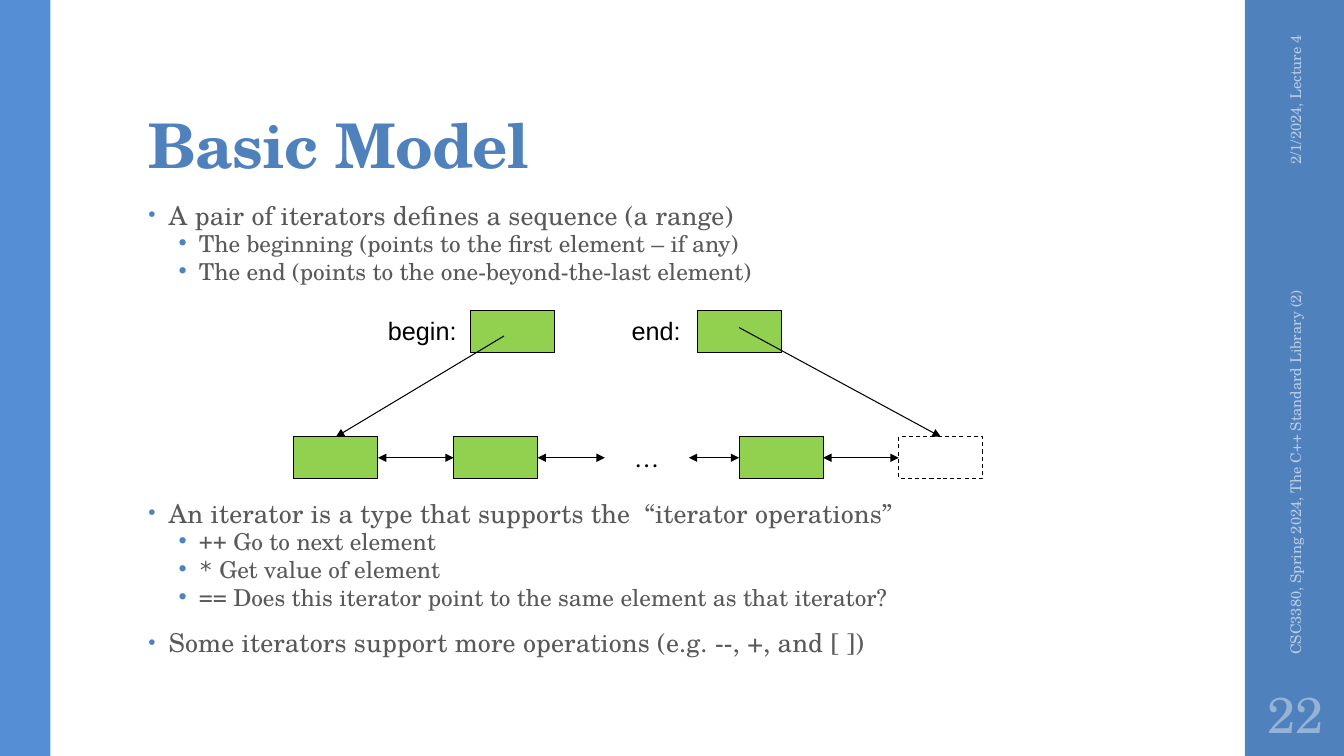
from lxml.etree import SubElement
from pptx import Presentation
from pptx.dml.color import RGBColor
from pptx.enum.dml import MSO_LINE
from pptx.enum.shapes import MSO_CONNECTOR, MSO_SHAPE
from pptx.enum.text import MSO_ANCHOR, PP_ALIGN
from pptx.oxml.ns import qn
from pptx.util import Inches, Pt

SERIF, MONO, SANS = "TeX Gyre Schola", "DejaVu Sans Mono", "Arial"
BLUE, LIGHT_BLUE, PALE, NUMBER = "4F81BD", "558ED5", "B9CDE5", "95B3D7"
GRAY, GREEN, BLACK = "595959", "92D050", "000000"
COLS, ROWS = 160, 90
NODE_W, NODE_H, NODE_ROW, POINTER_ROW = 10, 5, 52, 37

LEVELS = [
    dict(size=18.5, spacing=0.75, before=14, after=2, indent=0.2, bullet=80, track=10),
    dict(size=16.6, spacing=0.7, before=3, after=3, indent=0.5, bullet=100, track=0),
]
RANGE = [
    (0, "", "A pair of iterators defines a sequence (a range)"),
    (1, "", "The beginning (points to the first element – if any)"),
    (1, "", "The end (points to the one-beyond-the-last element)"),
]
OPERATIONS = [
    (0, "", "An iterator is a type that supports the  “iterator operations”"),
    (1, "++", " Go to next element"),
    (1, "*", " Get value of element"),
    (1, "==", " Does this iterator point to the same element as that iterator?"),
    (0, "", "Some iterators support more operations (e.g. --, +, and [ ])"),
]


def rgb(value):
    return RGBColor.from_string(value)


def add_run(p, text, size=18, font=SERIF, color=BLACK, bold=False, track=0):
    r = p.add_run()
    r.text = text
    r.font.size, r.font.name, r.font.bold = Pt(size), font, bold
    r.font.color.rgb = rgb(color)
    if track:
        r.font._element.set("spc", str(track))


class Deck:
    def __init__(self, prs):
        self.prs = prs
        self.slide = prs.slides.add_slide(prs.slide_layouts[6])

    def x(self, cols):
        return round(self.prs.slide_width * cols / COLS)

    def y(self, rows):
        return round(self.prs.slide_height * rows / ROWS)

    def area(self, col, row, cols, rows):
        return self.x(col), self.y(row), self.x(cols), self.y(rows)

    def box(self, *area, fill=None, line=None, dash=None):
        sp = self.slide.shapes.add_shape(MSO_SHAPE.RECTANGLE, *self.area(*area))
        sp.shadow.inherit = False
        if fill:
            sp.fill.solid()
            sp.fill.fore_color.rgb = rgb(fill)
        else:
            sp.fill.background()
        if line:
            sp.line.color.rgb = rgb(line)
            sp.line.width = Pt(0.75)
            sp.line.dash_style = dash
        else:
            sp.line.fill.background()

    def frame(self, *area, anchor=MSO_ANCHOR.TOP, rotation=0):
        sp = self.slide.shapes.add_textbox(*self.area(*area))
        sp.rotation = rotation
        tf = sp.text_frame
        tf.word_wrap = True
        tf.vertical_anchor = anchor
        return tf

    def text(self, text, *area, align=PP_ALIGN.LEFT, anchor=MSO_ANCHOR.MIDDLE,
             rotation=0, spacing=1.0, **style):
        tf = self.frame(*area, anchor=anchor, rotation=rotation)
        p = tf.paragraphs[0]
        p.alignment, p.line_spacing = align, spacing
        add_run(p, text, **style)

    def bullets(self, items, *area):
        tf = self.frame(*area)
        for i, (depth, code, text) in enumerate(items):
            p = tf.add_paragraph() if i else tf.paragraphs[0]
            level = LEVELS[depth]
            p.level, p.line_spacing = depth, level["spacing"]
            p.space_before, p.space_after = Pt(level["before"]), Pt(level["after"])
            pPr = p._p.get_or_add_pPr()
            pPr.set("marL", str(Inches(level["indent"])))
            pPr.set("indent", str(-Inches(0.2)))
            SubElement(SubElement(pPr, qn("a:buClr")), qn("a:srgbClr"), val=BLUE)
            SubElement(pPr, qn("a:buSzPct"), val=str(level["bullet"] * 1000))
            SubElement(pPr, qn("a:buFont"), typeface=SANS)
            SubElement(pPr, qn("a:buChar"), char="•")
            style = dict(size=level["size"], color=GRAY, track=level["track"])
            if code:
                add_run(p, code, font=MONO, **style)
            add_run(p, text, **style)

    def arrow(self, x1, y1, x2, y2, both=False):
        c = self.slide.shapes.add_connector(
            MSO_CONNECTOR.STRAIGHT, self.x(x1), self.y(y1), self.x(x2), self.y(y2))
        c.line.color.rgb = rgb(BLACK)
        c.line.width = Pt(0.75)
        ln = c.line._get_or_add_ln()
        for end in ("a:headEnd", "a:tailEnd") if both else ("a:tailEnd",):
            SubElement(ln, qn(end), type="triangle")
        SubElement(c._element.spPr, qn("a:effectLst"))


def main():
    prs = Presentation()
    prs.slide_width, prs.slide_height = Inches(13.33), Inches(7.5)
    deck = Deck(prs)

    deck.box(148.2, 0, 11.8, ROWS, fill=BLUE)
    deck.box(0, 0, 6, ROWS, fill=LIGHT_BLUE)
    deck.text("Basic Model", 16.5, 3.8, 127.2, 18.4, anchor=MSO_ANCHOR.BOTTOM,
              spacing=0.9, size=44, color=BLUE, bold=True, track=-50)
    deck.bullets(RANGE, 16.5, 24, 112.8, 11)
    deck.bullets(OPERATIONS, 16.5, 59.5, 112.8, 21.5)
    deck.text("2/1/2024, Lecture 4", 141.7, 13.1, 25, 4.8, rotation=270,
              align=PP_ALIGN.RIGHT, size=10.5, color=PALE)
    deck.text("CSC3380, Spring 2024, The C++ Standard Library (2)",
              130.7, 53.2, 47, 4.8, rotation=270, size=10.5, color=PALE)
    deck.text("22", 148.2, 81, 12, 7.8, align=PP_ALIGN.CENTER, size=36, color=NUMBER)

    for col, row in [(56, POINTER_ROW), (83, POINTER_ROW),
                     (35, NODE_ROW), (54, NODE_ROW), (88, NODE_ROW)]:
        deck.box(col, row, NODE_W, NODE_H, fill=GREEN, line=BLACK)
    deck.box(107, NODE_ROW, NODE_W, NODE_H, line=BLACK, dash=MSO_LINE.DASH)
    deck.text("…", 72, NODE_ROW, NODE_W, NODE_H, align=PP_ALIGN.CENTER)

    chain = [35, 54, 72, 88, 107]
    middle = NODE_ROW + NODE_H / 2
    for left, right in zip(chain, chain[1:]):
        deck.arrow(left + NODE_W, middle, right, middle, both=True)
    deck.arrow(60, 40, 40, NODE_ROW)
    deck.arrow(88, 39, 112, NODE_ROW)
    for label, col in [("begin:", 45), ("end:", 74)]:
        deck.text(label, col, POINTER_ROW, 13, 4.8, anchor=MSO_ANCHOR.TOP, font=SANS)

    prs.save("out.pptx")


if __name__ == "__main__":
    main()
